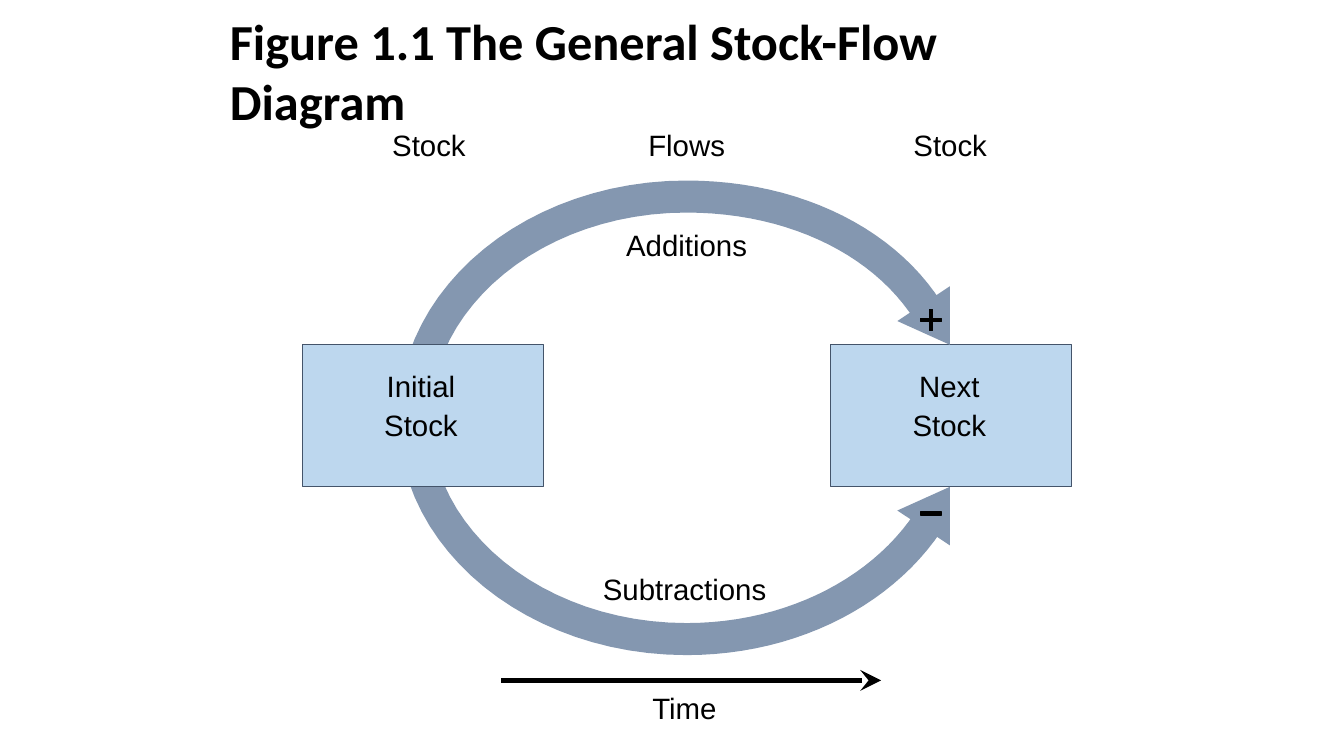
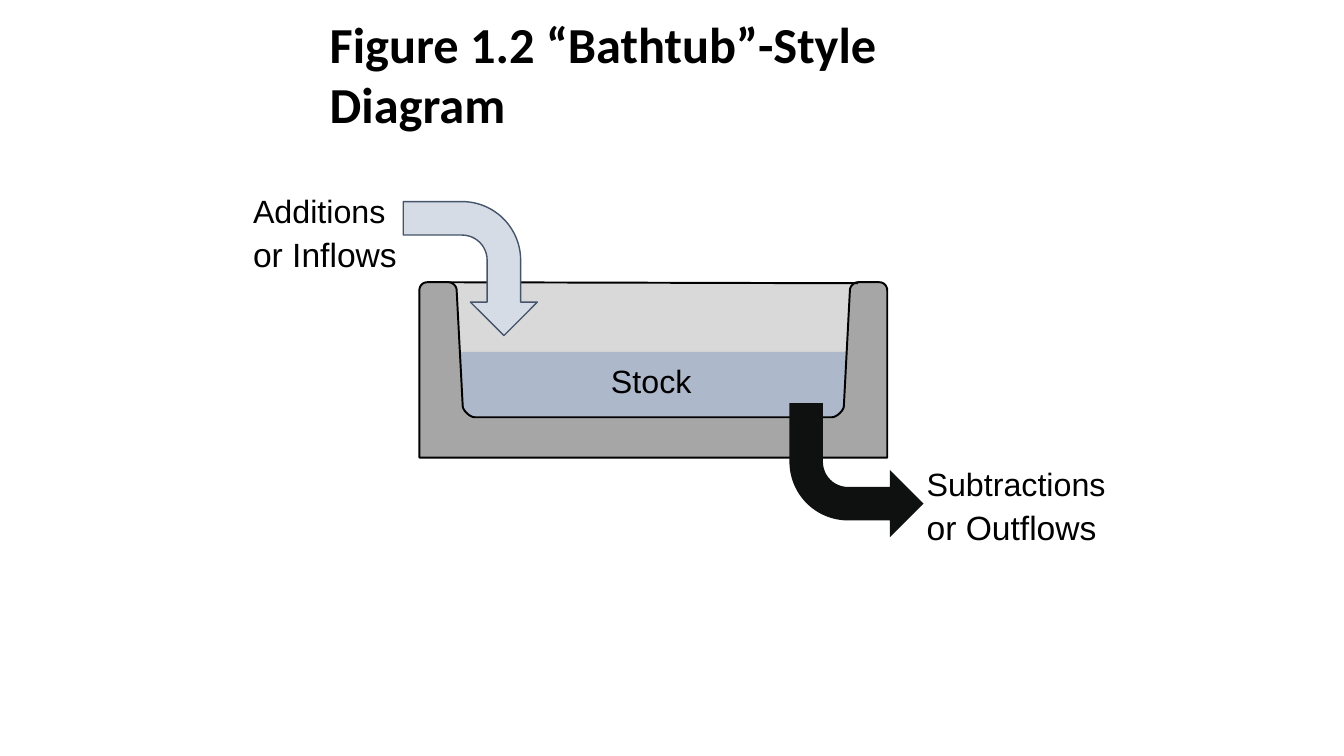
from typing import NamedTuple, Optional

import lxml.etree
import pptx
import pptx.dml.color
import pptx.enum.shapes
import pptx.enum.text
import pptx.oxml.ns
import pptx.util

Inches = pptx.util.Inches
Pt = pptx.util.Pt
RGBColor = pptx.dml.color.RGBColor
SHAPE = pptx.enum.shapes.MSO_SHAPE
ALIGN = pptx.enum.text.PP_ALIGN
ANCHOR = pptx.enum.text.MSO_ANCHOR

BLACK = RGBColor(0x00, 0x00, 0x00)
SLATE = RGBColor(0x44, 0x54, 0x6A)
FLOW_BLUE = RGBColor(0x84, 0x97, 0xB0)
STOCK_BLUE = RGBColor(0xBD, 0xD7, 0xEE)
WATER = RGBColor(0xAD, 0xB9, 0xCA)
INFLOW = RGBColor(0xD6, 0xDC, 0xE5)
OUTFLOW = RGBColor(0x0E, 0x11, 0x10)
TUB_GREY = RGBColor(0xA6, 0xA6, 0xA6)
AIR_GREY = RGBColor(0xD9, 0xD9, 0xD9)

TITLE_FONT, BODY_FONT = "Calibri", "Arial"
LINE_GAP = Pt(2.5)
TUB_CENTER = 6.48

Point = tuple[float, float]


class Label(NamedTuple):
    left: float
    top: float
    width: float
    lines: tuple[str, ...]
    sizes: tuple[int, ...] = (21,)


class StockBox(NamedTuple):
    left: float
    lines: tuple[str, ...]


class Style(NamedTuple):
    fill: Optional[RGBColor] = None
    line: Optional[RGBColor] = None
    weight: float = 0.75


FLOW_LABELS = (
    Label(3.89, 1.26, 0.77, ("Stock",)),
    Label(6.43, 1.26, 0.80, ("Flows",)),
    Label(9.06, 1.26, 0.77, ("Stock",)),
    Label(6.21, 2.25, 1.26, ("Additions",)),
    Label(5.98, 5.67, 1.70, ("Subtractions",)),
    Label(6.47, 6.85, 0.67, ("Time",)),
)
STOCK_BOXES = (
    StockBox(3, ("Initial", "Stock")),
    StockBox(8.24, ("Next", "Stock")),
)
TUB_LABELS = (
    Label(2.51, 1.9, 1.44, ("Additions", "or Inflows"), (23, 24)),
    Label(9.19, 4.61, 1.79, ("Subtractions", "or Outflows"), (23, 24)),
    Label(6.06, 3.58, 0.81, ("Stock",), (23,)),
)


def add_title_slide(prs, title: str, left: float, top: float, width: float):
    slide = prs.slides.add_slide(prs.slide_layouts[5])
    sp = slide.shapes.title
    sp.left, sp.top = Inches(left), Inches(top)
    sp.width, sp.height = Inches(width), Inches(1.3)
    tf = sp.text_frame
    tf.text = title
    tf.word_wrap = True
    tf.auto_size = pptx.enum.text.MSO_AUTO_SIZE.NONE
    tf.vertical_anchor = ANCHOR.TOP
    p = tf.paragraphs[0]
    p.alignment = ALIGN.LEFT
    p.line_spacing = 1.0
    p.font.name, p.font.size, p.font.bold = TITLE_FONT, Pt(36), True
    p.font.color.rgb = BLACK
    return slide


def apply_style(sp, style: Style) -> None:
    sp.shadow.inherit = False
    if style.fill is None:
        sp.fill.background()
    else:
        sp.fill.solid()
        sp.fill.fore_color.rgb = style.fill
    if style.line is None:
        sp.line.fill.background()
    else:
        sp.line.color.rgb = style.line
        sp.line.width = Pt(style.weight)


def add_preset(slide, kind, left: float, top: float, width: float,
               height: float, style: Style):
    sp = slide.shapes.add_shape(kind, Inches(left), Inches(top),
                                Inches(width), Inches(height))
    apply_style(sp, style)
    return sp


def add_outline(slide, points: list[Point], style: Style,
                close: bool = True) -> None:
    emu = [(Inches(x), Inches(y)) for x, y in points]
    builder = slide.shapes.build_freeform(*emu[0])
    builder.add_line_segments(emu[1:], close=close)
    apply_style(builder.convert_to_shape(), style)


def curve(p0: Point, p1: Point, p2: Point, p3: Point,
          steps: int = 24) -> list[Point]:
    """Points along a cubic Bezier curve."""
    def at(t: float, axis: int) -> float:
        u = 1 - t
        return (u**3 * p0[axis] + 3 * u * u * t * p1[axis]
                + 3 * u * t * t * p2[axis] + t**3 * p3[axis])
    return [(at(i / steps, 0), at(i / steps, 1)) for i in range(steps + 1)]


def mirrored(left_half: list[Point]) -> list[Point]:
    """The left half followed by its reflection across the tub's center."""
    return left_half + [(2 * TUB_CENTER - x, y) for x, y in reversed(left_half)]


def write_lines(tf, lines: tuple[str, ...], sizes: tuple[int, ...],
                alignment) -> None:
    for i, (line, size) in enumerate(zip(lines, sizes)):
        p = tf.paragraphs[0] if i == 0 else tf.add_paragraph()
        p.text = line
        p.alignment = alignment
        if i:
            p.space_before = LINE_GAP
        p.font.name, p.font.size = BODY_FONT, Pt(size)
        p.font.color.rgb = BLACK


def add_label(slide, label: Label) -> None:
    height = 0.4 * len(label.lines)
    tf = slide.shapes.add_textbox(Inches(label.left), Inches(label.top),
                                  Inches(label.width),
                                  Inches(height)).text_frame
    tf.margin_left = tf.margin_right = tf.margin_top = tf.margin_bottom = 0
    tf.word_wrap = False
    write_lines(tf, label.lines, label.sizes, ALIGN.LEFT)


def add_stock_box(slide, box: StockBox) -> None:
    sp = add_preset(slide, SHAPE.RECTANGLE, box.left, 3.42, 2.39, 1.41,
                    Style(STOCK_BLUE, SLATE))
    tf = sp.text_frame
    tf.vertical_anchor = ANCHOR.TOP
    tf.margin_left, tf.margin_right = 0, Inches(0.04)
    tf.margin_top = Inches(0.23)
    write_lines(tf, box.lines, (21, 21), ALIGN.CENTER)


def add_line(slide, start: Point, end: Point, weight: float,
             arrow: bool = False) -> None:
    ln = slide.shapes.add_connector(
        pptx.enum.shapes.MSO_CONNECTOR.STRAIGHT,
        Inches(start[0]), Inches(start[1]), Inches(end[0]), Inches(end[1]))
    ln.line.color.rgb = BLACK
    ln.line.width = Pt(weight)
    qn = pptx.oxml.ns.qn
    if arrow:
        lxml.etree.SubElement(ln.line._get_or_add_ln(), qn("a:tailEnd"),
                              type="stealth", w="lg", len="lg")
    lxml.etree.SubElement(ln.element.spPr, qn("a:effectLst"))


def build_stock_flow(prs) -> None:
    slide = add_title_slide(prs, "Figure 1.1 The General Stock-Flow Diagram",
                            2.18, 0.05, 8.74)
    loop = (curve((9.26, 3.18), (8.84, 2.43), (7.91, 1.95), (6.81, 1.95))
            + curve((6.81, 1.95), (5.32, 1.95), (4.11, 2.93), (4.11, 4.15))[1:]
            + curve((4.11, 4.15), (4.11, 5.36), (5.32, 6.34), (6.81, 6.34))[1:]
            + curve((6.81, 6.34), (7.89, 6.34), (8.82, 5.83), (9.26, 5.09))[1:])
    add_outline(slide, loop, Style(line=FLOW_BLUE, weight=22.88), close=False)
    for box in STOCK_BOXES:
        add_stock_box(slide, box)
    for tip_y, direction in ((3.42, -1), (4.83, 1)):
        head = [(9.42, tip_y), (8.9, tip_y + direction * 0.235),
                (9.42, tip_y + direction * 0.58)]
        add_outline(slide, head, Style(FLOW_BLUE))

    mark = Style(BLACK, BLACK, 1.13)
    plus = add_preset(slide, SHAPE.CROSS, 9.13, 3.07, 0.21, 0.21, mark)
    plus.adjustments[0] = 0.43
    add_preset(slide, SHAPE.RECTANGLE, 9.13, 5.08, 0.21, 0.03, mark)
    add_line(slide, (4.97, 6.75), (8.74, 6.75), 3, arrow=True)
    for label in FLOW_LABELS:
        add_label(slide, label)


def build_bathtub(prs) -> None:
    slide = add_title_slide(prs, "Figure 1.2 “Bathtub”-Style Diagram",
                            3.17, 0.08, 7.16)
    outer_rim = curve((4.16, 2.88), (4.16, 2.84), (4.19, 2.8), (4.24, 2.8), 8)
    inner_rim = curve((4.45, 2.8), (4.49, 2.8), (4.53, 2.84), (4.53, 2.88), 8)
    floor = curve((4.59, 4.03), (4.59, 4.07), (4.66, 4.14), (4.71, 4.14), 8)
    water_edge = [(4.56, 3.49)]

    add_outline(slide, mirrored(inner_rim + water_edge), Style(AIR_GREY))
    add_outline(slide, mirrored(water_edge + floor), Style(WATER))
    add_outline(slide, mirrored([(4.16, 4.54)] + outer_rim + inner_rim + floor),
                Style(TUB_GREY, BLACK, 1.38))
    add_line(slide, (4.45, 2.8), (8.51, 2.81), 1.38)
    for label in TUB_LABELS:
        add_label(slide, label)

    inflow = add_preset(slide, SHAPE.BENT_ARROW, 4, 2, 1.33, 1.33,
                        Style(INFLOW, SLATE, 1))
    inflow.rotation = 90
    outflow = add_preset(slide, SHAPE.BENT_ARROW, 7.83, 4, 1.33, 1.33,
                         Style(OUTFLOW))
    outflow.element.spPr.get_or_add_xfrm().set("flipV", "1")


def main() -> None:
    prs = pptx.Presentation()
    prs.slide_width, prs.slide_height = Inches(13.33), Inches(7.5)
    build_stock_flow(prs)
    build_bathtub(prs)
    prs.save("out.pptx")


if __name__ == "__main__":
    main()
